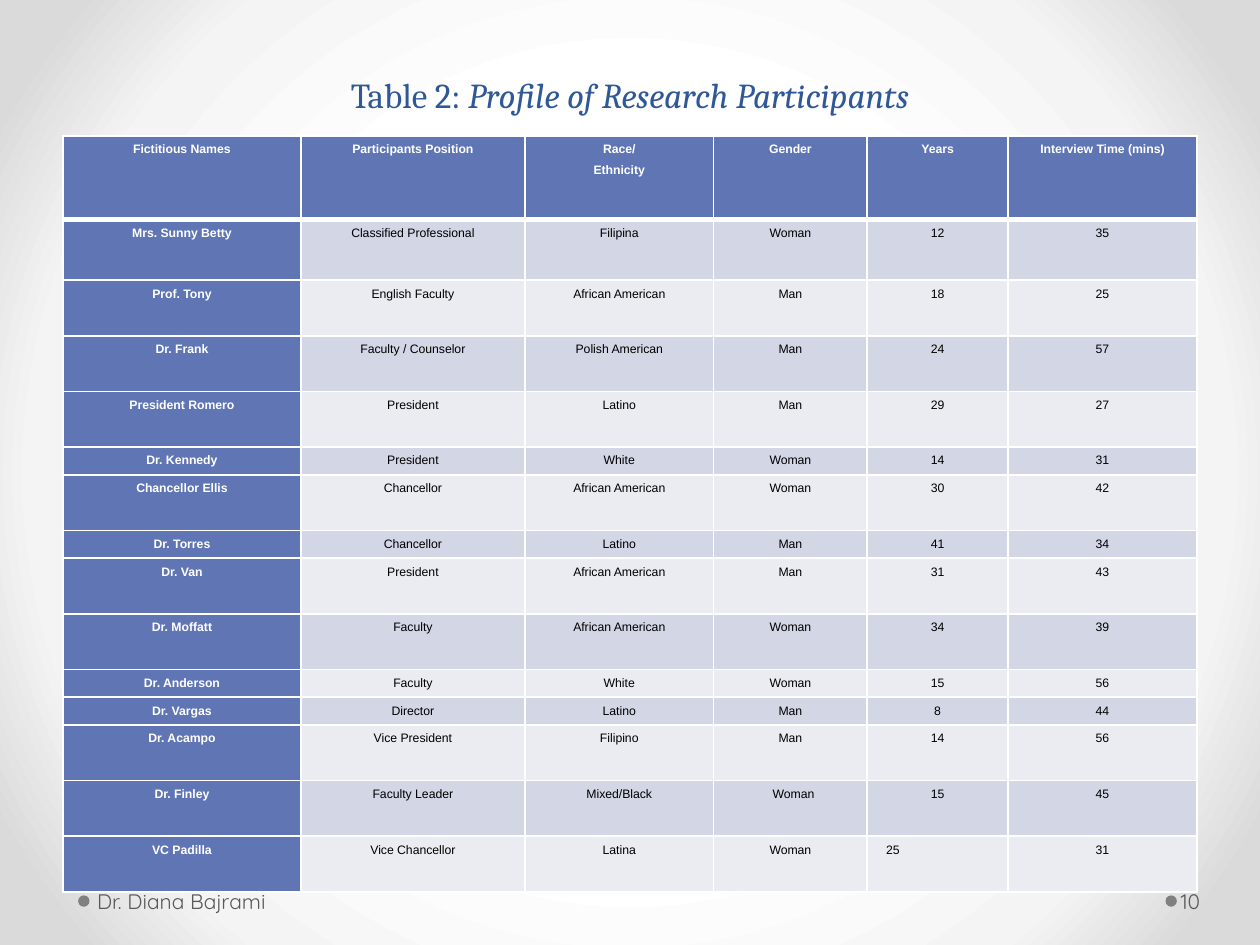
import copy
import dataclasses

import pptx
import pptx.dml.color
import pptx.enum.shapes
import pptx.enum.text
import pptx.oxml
import pptx.oxml.ns
import pptx.util

ALIGN = pptx.enum.text.PP_ALIGN
ANCHOR = pptx.enum.text.MSO_ANCHOR


@dataclasses.dataclass(frozen=True)
class Theme:
    """Colours, fonts and type sizes of the slide."""
    title: str = "2F5897"
    header: str = "6076B4"
    bands: tuple = ("D2D6E5", "EAECF2")
    white: str = "FFFFFF"
    body: str = "000000"
    footer: str = "595959"
    dot: str = "808080"
    glow: tuple = ((50, "FFFFFF"), (76, "F4F4F4"), (92, "DADADA"))
    title_font: str = "Cambria"
    table_font: str = "Arial"
    footer_font: str = "Quicksand"
    title_size: int = 20
    table_size: int = 7
    footer_size: int = 12


THEME = Theme()
WIDTH, HEIGHT = pptx.util.Inches(10), pptx.util.Inches(7.5)
COLUMNS = (1.89, 1.78, 1.5, 1.22, 1.12, 1.5)
TALL, SHORT = 0.44, 0.22
ROWS = (0.66, 0.48, TALL, TALL, TALL, SHORT, TALL, SHORT,
        TALL, TALL, SHORT, SHORT, TALL, TALL, TALL)
INDENTS = {(13, 3): 0.05, (14, 4): 0.11}
LEFT_ALIGNED = {(14, 4)}
PARTICIPANTS = (
    ("Fictitious Names", "Participants Position", "Race/\nEthnicity", "Gender", "Years",
     "Interview Time (mins)"),
    ("Mrs. Sunny Betty", "Classified Professional", "Filipina", "Woman", "12", "35"),
    ("Prof. Tony", "English Faculty", "African American", "Man", "18", "25"),
    ("Dr. Frank", "Faculty / Counselor", "Polish American", "Man", "24", "57"),
    ("President Romero", "President", "Latino", "Man", "29", "27"),
    ("Dr. Kennedy", "President", "White", "Woman", "14", "31"),
    ("Chancellor Ellis", "Chancellor", "African American", "Woman", "30", "42"),
    ("Dr. Torres", "Chancellor", "Latino", "Man", "41", "34"),
    ("Dr. Van", "President", "African American", "Man", "31", "43"),
    ("Dr. Moffatt", "Faculty", "African American", "Woman", "34", "39"),
    ("Dr. Anderson", "Faculty", "White", "Woman", "15", "56"),
    ("Dr. Vargas", "Director", "Latino", "Man", "8", "44"),
    ("Dr. Acampo", "Vice President", "Filipino", "Man", "14", "56"),
    ("Dr. Finley", "Faculty Leader", "Mixed/Black", "Woman", "15", "45"),
    ("VC Padilla", "Vice Chancellor", "Latina", "Woman", "25", "31"),
)


def rgb(value):
    """Return a colour from its hex value."""
    return pptx.dml.color.RGBColor.from_string(value)


def share(x, y, w, h):
    """Return a box given as shares of the slide's size."""
    return int(x * WIDTH), int(y * HEIGHT), int(w * WIDTH), int(h * HEIGHT)


def set_insets(frame, left, top, right, bottom):
    """Set the margins of a text frame or cell in inches."""
    frame.margin_left, frame.margin_top = pptx.util.Inches(left), pptx.util.Inches(top)
    frame.margin_right, frame.margin_bottom = pptx.util.Inches(right), pptx.util.Inches(bottom)


def add_text(p, text, font, size, color, bold=False, italic=False, align=None, spacing=None):
    """Add formatted text to a paragraph, with its line breaks."""
    if align is not None:
        p.alignment = align
    if spacing is not None:
        p.line_spacing = spacing
    for i, line in enumerate(text.split("\n")):
        if i:
            p.add_line_break()
            p._p[-1].append(copy.deepcopy(p.runs[-1]._r.rPr))
        r = p.add_run()
        r.text = line
        r.font.name, r.font.size = font, pptx.util.Pt(size)
        r.font.bold, r.font.italic = bold, italic
        r.font.color.rgb = rgb(color)


def set_border(cell, side, points):
    """Draw one white border of a cell."""
    cell._tc.get_or_add_tcPr().append(pptx.oxml.parse_xml(
        f'<a:{side} {pptx.oxml.ns.nsdecls("a")} w="{pptx.util.Pt(points)}"><a:solidFill>'
        f'<a:srgbClr val="{THEME.white}"/></a:solidFill></a:{side}>'))


def paint_background(s):
    """Fill the slide with a circular glow."""
    stops = "".join(f'<a:gs pos="{pos * 1000}"><a:srgbClr val="{color}"/></a:gs>'
                    for pos, color in THEME.glow)
    s._element.cSld.insert(0, pptx.oxml.parse_xml(
        f'<p:bg {pptx.oxml.ns.nsdecls("p", "a")}><p:bgPr><a:gradFill rotWithShape="1">'
        f'<a:gsLst>{stops}</a:gsLst><a:path path="circle">'
        '<a:fillToRect l="50000" t="50000" r="50000" b="50000"/></a:path></a:gradFill>'
        '<a:effectLst/></p:bgPr></p:bg>'))


def place_title(s, box):
    """Place the table's caption in the title placeholder."""
    sp = s.shapes.title
    sp.left, sp.top, sp.width, sp.height = box
    tf = sp.text_frame
    tf.auto_size = pptx.enum.text.MSO_AUTO_SIZE.NONE
    tf.vertical_anchor = ANCHOR.TOP
    set_insets(tf, 0.1, 0.25, 0.1, 0)
    style = dict(font=THEME.title_font, size=THEME.title_size, color=THEME.title)
    p = tf.paragraphs[0]
    add_text(p, "Table 2: ", align=ALIGN.CENTER, **style)
    add_text(p, "Profile of Research Participants", italic=True, **style)


def fill_cell(cell, row, col, text):
    """Format one table cell by its row and column."""
    heading = row == 0 or col == 0
    set_insets(cell, 0.04, 0, 0.04, 0)
    for side, points in (("lnL", 1), ("lnR", 1), ("lnT", 3 if row == 1 else 1),
                         ("lnB", 3 if row == 0 else 1)):
        set_border(cell, side, points)
    cell.fill.solid()
    cell.fill.fore_color.rgb = rgb(THEME.header if heading else THEME.bands[(row - 1) % 2])
    p = cell.text_frame.paragraphs[0]
    add_text(p, text, THEME.table_font, THEME.table_size,
             THEME.white if heading else THEME.body, bold=heading, spacing=1.5,
             align=ALIGN.LEFT if (row, col) in LEFT_ALIGNED else ALIGN.CENTER)
    if (row, col) in INDENTS:
        p._p.get_or_add_pPr().set("marL", str(pptx.util.Inches(INDENTS[row, col])))


def place_table(s, box):
    """Place the participants table, sharing its box among columns and rows."""
    width, height = box[2:]
    table = s.shapes.add_table(len(ROWS), len(COLUMNS), *box).table
    for column, part in zip(table.columns, COLUMNS):
        column.width = int(width * part / sum(COLUMNS))
    for row, part in zip(table.rows, ROWS):
        row.height = int(height * part / sum(ROWS))
    for i, record in enumerate(PARTICIPANTS):
        for j, text in enumerate(record):
            fill_cell(table.cell(i, j), i, j, text)


def place_footer_item(s, box, text, dot_x, left_inset):
    """Place a footer text and the dot before it."""
    x, y, w, h = box
    size = pptx.util.Inches(0.09)
    dot = s.shapes.add_shape(pptx.enum.shapes.MSO_SHAPE.OVAL, int(dot_x * WIDTH),
                             y + (h - size) // 2, size, size)
    dot.shadow.inherit = False
    dot.fill.solid()
    dot.fill.fore_color.rgb = rgb(THEME.dot)
    dot.line.fill.background()
    tf = s.shapes.add_textbox(x, y, w, h).text_frame
    tf.word_wrap = True
    tf.vertical_anchor = ANCHOR.MIDDLE
    set_insets(tf, left_inset, 0.05, 0.05, 0.05)
    add_text(tf.paragraphs[0], text, THEME.footer_font, THEME.footer_size, THEME.footer)


def build_table_slide(prs):
    """Build the slide with caption, table and footer."""
    s = prs.slides.add_slide(prs.slide_layouts[5])
    paint_background(s)
    place_title(s, share(0.05, 0.044, 0.9, 0.19))
    place_table(s, share(0.05, 0.144, 0.9, 0.8))
    place_footer_item(s, share(0.072, 0.927, 0.311, 0.053), "Dr. Diana Bajrami", 0.062, 0.05)
    place_footer_item(s, share(0.934, 0.927, 0.061, 0.053), "10", 0.925, 0.03)


def main():
    """Create and save the presentation."""
    prs = pptx.Presentation()
    prs.slide_width, prs.slide_height = WIDTH, HEIGHT
    build_table_slide(prs)
    prs.save("out.pptx")


if __name__ == "__main__":
    main()
